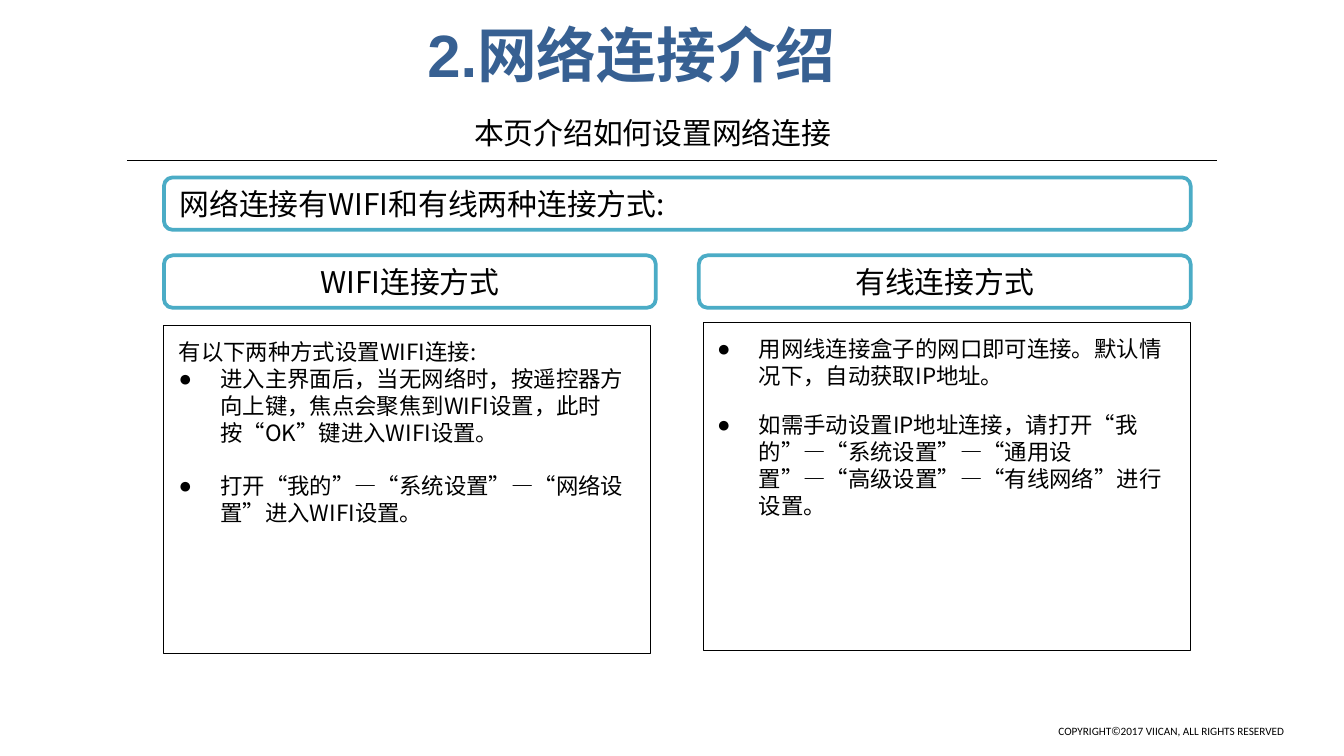
from pptx import Presentation
from pptx.dml.color import RGBColor
from pptx.enum.shapes import MSO_CONNECTOR, MSO_SHAPE
from pptx.enum.text import MSO_ANCHOR, MSO_AUTO_SIZE, PP_ALIGN
from pptx.oxml.xmlchemy import OxmlElement
from pptx.util import Pt

RECT, ROUND = MSO_SHAPE.RECTANGLE, MSO_SHAPE.ROUNDED_RECTANGLE
LEFT, MID = PP_ALIGN.LEFT, PP_ALIGN.CENTER
TOP, CENTER = MSO_ANCHOR.TOP, MSO_ANCHOR.MIDDLE
NO_FIT = MSO_AUTO_SIZE.NONE
LINE = MSO_CONNECTOR.STRAIGHT
SCALE = 4572

THEME = {
    "ink": RGBColor(0, 0, 0), "paper": RGBColor(255, 255, 255),
    "blue": RGBColor(0x37, 0x60, 0x92), "teal": RGBColor(0x4B, 0xAC, 0xC6),
    "title": Pt(32), "head": Pt(16), "body": Pt(12), "foot": Pt(6),
    "sans": "Noto Sans CJK SC", "plain": "Calibri", "bold": "Arial",
    "wide": "Noto Sans CJK KR",
}
FRAME = {"vertical_anchor": TOP, "auto_size": NO_FIT, "word_wrap": True}


def px(*nums):
    return [n * SCALE for n in nums]


def write(para, text, size, face, ink="ink", bold=False):
    run = para.add_run()
    run.text = text
    look = {"size": THEME[size], "name": THEME[face], "bold": bold}
    for key, val in look.items():
        setattr(run.font, key, val)
    run.font.color.rgb = THEME[ink]
    east = OxmlElement("a:ea")
    east.set("typeface", THEME["sans"])
    run.font._element.append(east)


deck = Presentation()
deck.slide_width, deck.slide_height = px(2000, 1125)
slide = deck.slides.add_slide(deck.slide_layouts[3])
shapes = slide.shapes
holds = {hold.placeholder_format.idx: hold for hold in slide.placeholders}

title = shapes.title
title.left, title.top, title.width, title.height = px(518, 16, 844, 128)
frame = title.text_frame
for key, val in FRAME.items():
    setattr(frame, key, val)
frame.paragraphs[0].alignment = MID
write(frame.paragraphs[0], "2.网络连接介绍", "title", "bold", "blue", True)

lead = shapes.add_textbox(*px(686, 161, 772, 74)).text_frame
lead.word_wrap = True
write(lead.paragraphs[0], "本页介绍如何设置网络连接", "head", "plain")

rule = shapes.add_connector(LINE, *px(189, 239, 1811, 239))
rule.line.color.rgb = THEME["ink"]
rule.line.width = Pt(0.75)
rule._element.spPr.append(OxmlElement("a:effectLst"))

boxes = [
    (ROUND, (244, 264, 1528, 78), "teal", 2, LEFT, "网络连接有WIFI和有线两种连接方式:"),
    (ROUND, (244, 380, 732, 78), "teal", 2, MID, "WIFI连接方式"),
    (ROUND, (1040, 380, 732, 78), "teal", 2, MID, "有线连接方式"),
    (RECT, (243, 484, 725, 488), "ink", 0.5, LEFT, ""),
    (RECT, (1047, 480, 725, 488), "ink", 0.5, LEFT, ""),
]
for form, place, edge, width, align, text in boxes:
    box = shapes.add_shape(form, *px(*place))
    box.shadow.inherit = False
    box.fill.solid()
    box.fill.fore_color.rgb = THEME["paper"]
    box.line.color.rgb = THEME[edge]
    box.line.width = Pt(width)
    if text:
        box.text_frame.vertical_anchor = CENTER
        para = box.text_frame.paragraphs[0]
        para.alignment = align
        write(para, text, "head", "sans")

lists = [
    (1, (246, 493, 722, 344), [
        ("", 0, "有以下两种方式设置WIFI连接:"),
        ("●", 0, "进入主界面后，当无网络时，按遥控器方向上键，焦点会聚焦到WIFI设置，此时按“OK”键进入WIFI设置。"),
        ("●", 14.4, "打开“我的”—“系统设置”—“网络设置”进入WIFI设置。"),
    ]),
    (2, (1047, 489, 724, 444), [
        ("●", 0, "用网线连接盒子的网口即可连接。默认情况下，自动获取IP地址。"),
        ("●", 12, "如需手动设置IP地址连接，请打开“我的”—“系统设置”—“通用设置”—“高级设置”—“有线网络”进行设置。"),
    ]),
]
for idx, place, items in lists:
    hold = holds[idx]
    hold.left, hold.top, hold.width, hold.height = px(*place)
    shapes._spTree.append(hold._element)
    frame = hold.text_frame
    for key, val in FRAME.items():
        setattr(frame, key, val)
    for spot, (mark, gap, text) in enumerate(items):
        para = frame.add_paragraph() if spot else frame.paragraphs[0]
        look = {"space_before": Pt(gap), "line_spacing": Pt(14.4), "alignment": LEFT}
        for key, val in look.items():
            setattr(para, key, val)
        props = para._p.get_or_add_pPr()
        dent = 62 * SCALE if mark else 0
        props.set("marL", str(dent))
        props.set("indent", str(-dent))
        dot = OxmlElement("a:buChar" if mark else "a:buNone")
        if mark:
            dot.set("char", mark)
        props.append(dot)
        write(para, text, "body", "sans")

foot = shapes.add_textbox(*px(1561, 1070, 370, 36)).text_frame
foot.word_wrap = False
foot.margin_left, foot.margin_right, foot.margin_top, foot.margin_bottom = px(14, 14, 8, 8)
for text, face in (("COPYRIGHT", "plain"), ("©", "wide"), ("2017 VIICAN, ALL RIGHTS RESERVED", "plain")):
    write(foot.paragraphs[0], text, "foot", face)

deck.save("out.pptx")
